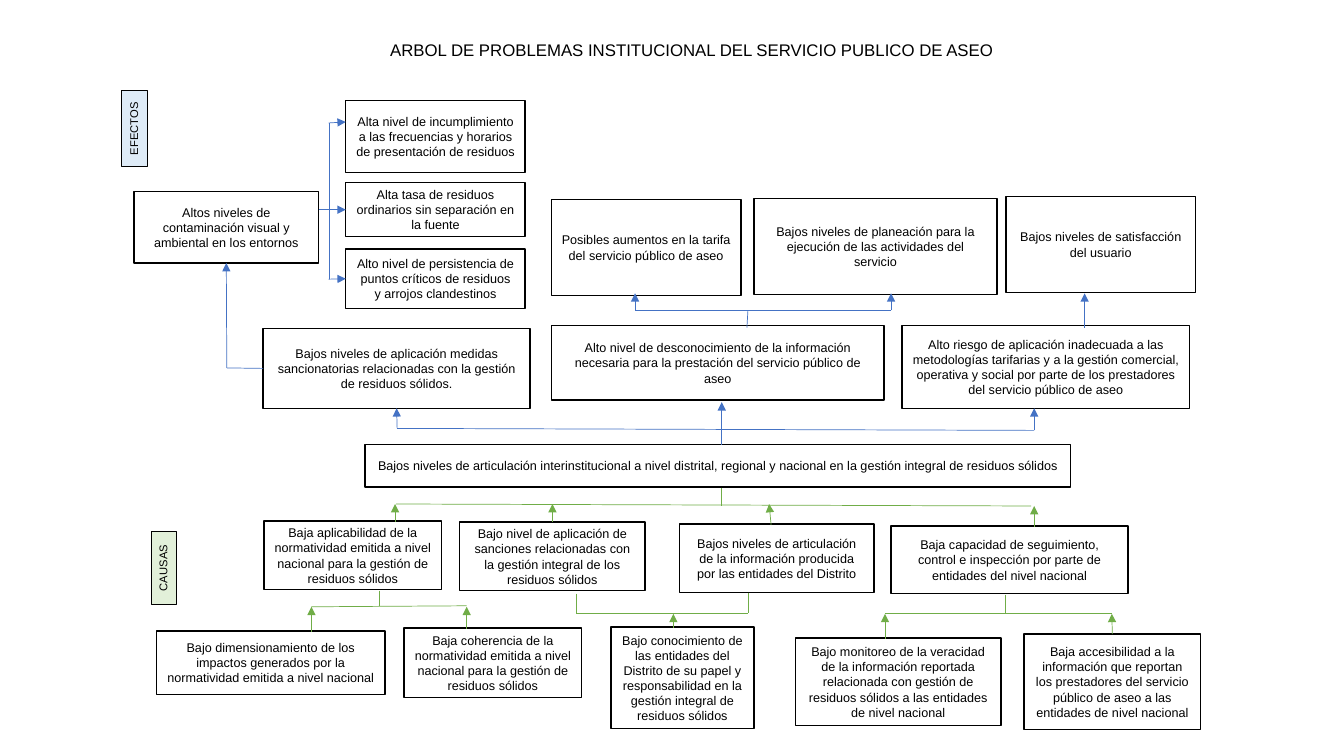
from typing import NamedTuple, Optional

from lxml import etree
from pptx import Presentation
from pptx.dml.color import RGBColor
from pptx.enum.shapes import MSO_CONNECTOR, MSO_SHAPE
from pptx.enum.text import MSO_ANCHOR, PP_ALIGN
from pptx.oxml.ns import qn
from pptx.util import Inches, Pt

RECT, STRAIGHT = MSO_SHAPE.RECTANGLE, MSO_CONNECTOR.STRAIGHT
TOP, MIDDLE = MSO_ANCHOR.TOP, MSO_ANCHOR.MIDDLE
CENTER = PP_ALIGN.CENTER

BLACK = RGBColor(0x00, 0x00, 0x00)
WHITE = RGBColor(0xFF, 0xFF, 0xFF)
BLUE = RGBColor(0x44, 0x72, 0xC4)
GREEN = RGBColor(0x70, 0xAD, 0x47)
PALE_BLUE = RGBColor(0xDE, 0xEB, 0xF7)
PALE_GREEN = RGBColor(0xE2, 0xF0, 0xD9)

# Grid: square cells of a tenth of an inch
CELL = Inches(0.1)
COLS, ROWS = 133.33, 75
SNAP = 0.3  # a line end this near the middle of a box side is joined to it
FONT = "Arial"


class Box(NamedTuple):
    col: float
    row: float
    cols: float
    rows: float
    text: str


class Label(NamedTuple):
    box: Box
    fill: RGBColor


class Line(NamedTuple):
    col1: float
    row1: float
    col2: float
    row2: float


class Branch(NamedTuple):
    color: RGBColor
    plain: list[Line]
    arrows: list[Line]


TITLE = Box(21.8, 3.5, 93.7, 3,
            "ARBOL DE PROBLEMAS INSTITUCIONAL DEL SERVICIO PUBLICO DE ASEO")

BOXES = [
    # Effects, upper level
    Box(13.3, 19, 18.3, 7.1, "Altos niveles de contaminación visual y ambiental en los entornos"),
    Box(34.3, 10, 17.8, 7.1,
        "Alta nivel de incumplimiento a las frecuencias y horarios de presentación de residuos"),
    Box(34.3, 18.1, 17.8, 5.4, "Alta tasa de residuos ordinarios sin separación en la fuente"),
    Box(34.3, 24.7, 17.8, 5.9,
        "Alto nivel de persistencia de puntos críticos de residuos y arrojos clandestinos"),
    Box(54.7, 19.8, 18.8, 9.5, "Posibles aumentos en la tarifa del servicio público de aseo"),
    Box(74.8, 19.7, 24.1, 9.5,
        "Bajos niveles de planeación para la ejecución de las actividades del servicio"),
    Box(99.8, 19.5, 18.8, 9.5, "Bajos niveles de satisfacción del usuario"),
    # Effects, lower level
    Box(26.1, 32.6, 26.5, 7.9,
        "Bajos niveles de aplicación medidas sancionatorias relacionadas con la gestión "
        "de residuos sólidos."),
    Box(54.7, 32.3, 33, 7.4,
        "Alto nivel de desconocimiento de la información necesaria para la prestación "
        "del servicio público de aseo"),
    Box(89.5, 32.3, 28.5, 8.2,
        "Alto riesgo de aplicación inadecuada a las metodologías tarifarias y a la gestión "
        "comercial, operativa y social por parte de los prestadores del servicio público de aseo"),
    # Central problem
    Box(36.2, 44.1, 70, 4.2,
        "Bajos niveles de articulación interinstitucional a nivel distrital, regional y nacional "
        "en la gestión integral de residuos sólidos"),
    # Causes, upper level
    Box(26.2, 51.7, 17.6, 6.8,
        "Baja aplicabilidad de la normatividad emitida a nivel nacional para la gestión de "
        "residuos sólidos"),
    Box(45.6, 51.8, 18.4, 6.8,
        "Bajo nivel de aplicación de sanciones relacionadas con la gestión integral de los "
        "residuos sólidos"),
    Box(67.4, 52, 19.3, 6.8,
        "Bajos niveles de articulación de la información producida por las entidades del Distrito"),
    Box(88.4, 52.2, 23.5, 6.7,
        "Baja capacidad de seguimiento, control e inspección por parte de entidades del "
        "nivel nacional"),
    # Causes, lower level
    Box(15.5, 62.6, 22.7, 6.3,
        "Bajo dimensionamiento de los impactos generados por la normatividad emitida a "
        "nivel nacional"),
    Box(40.1, 62.3, 17.6, 6.9,
        "Baja coherencia de la normatividad emitida a nivel nacional para la gestión de "
        "residuos sólidos"),
    Box(60.6, 62.2, 14.2, 10.1,
        "Bajo conocimiento de las entidades del Distrito de su papel y responsabilidad en la "
        "gestión integral de residuos sólidos"),
    Box(78.9, 63.3, 20.4, 8.7,
        "Bajo monitoreo de la veracidad de la información reportada relacionada con gestión "
        "de residuos sólidos a las entidades de nivel nacional"),
    Box(101.6, 62.9, 17.5, 9.5,
        "Baja accesibilidad a la información que reportan los prestadores del servicio público "
        "de aseo a las entidades de nivel nacional"),
]

LABELS = [
    Label(Box(9.6, 11.5, 7.5, 2.5, "EFECTOS"), PALE_BLUE),
    Label(Box(12.6, 55.1, 7.3, 2.5, "CAUSAS"), PALE_GREEN),
]

BRANCHES = [
    Branch(BLUE,
           plain=[Line(26.1, 36.5, 22.5, 36.5), Line(63, 30.8, 88.4, 30.8),
                  Line(74.1, 32.5, 74.2, 30.8), Line(39.4, 42.5, 102.6, 42.7),
                  Line(71.6, 44.1, 71.6, 42.5), Line(32.7, 12.2, 32.7, 27.7),
                  Line(31.6, 20.8, 32.6, 20.8)],
           arrows=[Line(22.5, 36.5, 22.5, 26.2), Line(63, 30.8, 63, 29.1),
                   Line(88.4, 30.8, 88.4, 29.1), Line(107.6, 32.5, 107.6, 29.1),
                   Line(39.4, 42.5, 39.4, 40.5), Line(71.6, 42.7, 71.6, 39.9),
                   Line(102.6, 42.7, 102.6, 40.5), Line(32.6, 12.2, 34.3, 12.1),
                   Line(32.7, 20.8, 34.3, 20.8), Line(32.6, 27.7, 34.3, 27.7)]),
    Branch(GREEN,
           plain=[Line(39.3, 50, 102.3, 50.2), Line(71.6, 48.4, 71.6, 50.2),
                  Line(30.9, 60.2, 46.3, 60.1), Line(37.6, 58.6, 37.6, 60.1),
                  Line(57.2, 60.9, 74.2, 60.9), Line(57.2, 58.9, 57.2, 60.9),
                  Line(74.2, 58.8, 74.2, 60.8), Line(87.8, 60.9, 110.3, 60.9),
                  Line(99.7, 59, 99.7, 60.9)],
           arrows=[Line(39.2, 51.8, 39.2, 50), Line(54.8, 51.8, 54.8, 50),
                   Line(76.5, 52.1, 76.3, 50), Line(102.6, 52.3, 102.6, 50.2),
                   Line(30.9, 62.7, 30.9, 60.2), Line(46.3, 62.4, 46.3, 60.2),
                   Line(66.8, 62.3, 66.8, 60.9), Line(87.8, 63.4, 87.8, 60.9),
                   Line(110.3, 63, 110.3, 60.9)]),
]


def grid(*cells: float) -> list[int]:
    return [round(n * CELL) for n in cells]


def write(sp, text: str, size: float, anchor) -> None:
    tf = sp.text_frame
    tf.word_wrap = True
    tf.vertical_anchor = anchor
    p = tf.paragraphs[0]
    p.text = text
    p.alignment = CENTER
    p.font.name, p.font.size, p.font.color.rgb = FONT, Pt(size), BLACK


def add_box(s, box: Box, fill=WHITE, border=1.0, size=9.0, anchor=MIDDLE):
    sp = s.shapes.add_shape(RECT, *grid(*box[:4]))
    sp.shadow.inherit = False
    sp.fill.solid()
    sp.fill.fore_color.rgb = fill
    sp.line.color.rgb, sp.line.width = BLACK, Pt(border)
    write(sp, box.text, size, anchor)
    return sp


def find_side(col: float, row: float, shapes: list) -> Optional[tuple]:
    for box, sp in zip(BOXES, shapes):
        mid_col, mid_row = box.col + box.cols / 2, box.row + box.rows / 2
        sides = [(mid_col, box.row), (box.col, mid_row),
                 (mid_col, box.row + box.rows), (box.col + box.cols, mid_row)]
        for i, (x, y) in enumerate(sides):
            if abs(x - col) < SNAP and abs(y - row) < SNAP:
                return sp, i
    return None


def add_line(s, line: Line, color: RGBColor, arrow: bool, shapes: list) -> None:
    cxn = s.shapes.add_connector(STRAIGHT, *grid(*line))
    cxn.line.color.rgb, cxn.line.width = color, Pt(0.5)
    for connect, end in ((cxn.begin_connect, line[:2]), (cxn.end_connect, line[2:])):
        side = find_side(*end, shapes)
        if side:
            connect(*side)
    if arrow:
        etree.SubElement(cxn.line._get_or_add_ln(), qn("a:tailEnd"), type="triangle")
    etree.SubElement(cxn._element.spPr, qn("a:effectLst"))


def main() -> None:
    prs = Presentation()
    prs.slide_width, prs.slide_height = grid(COLS, ROWS)
    s = prs.slides.add_slide(prs.slide_layouts[6])

    # Title
    write(s.shapes.add_textbox(*grid(*TITLE[:4])), TITLE.text, 12, TOP)

    # Boxes and side labels
    shapes = [add_box(s, box) for box in BOXES]
    for label in LABELS:
        add_box(s, label.box, label.fill, 0.75, 8, TOP).rotation = 270

    # Lines and arrows
    for branch in BRANCHES:
        for arrow, lines in ((False, branch.plain), (True, branch.arrows)):
            for line in lines:
                add_line(s, line, branch.color, arrow, shapes)

    prs.save("out.pptx")


if __name__ == "__main__":
    main()
